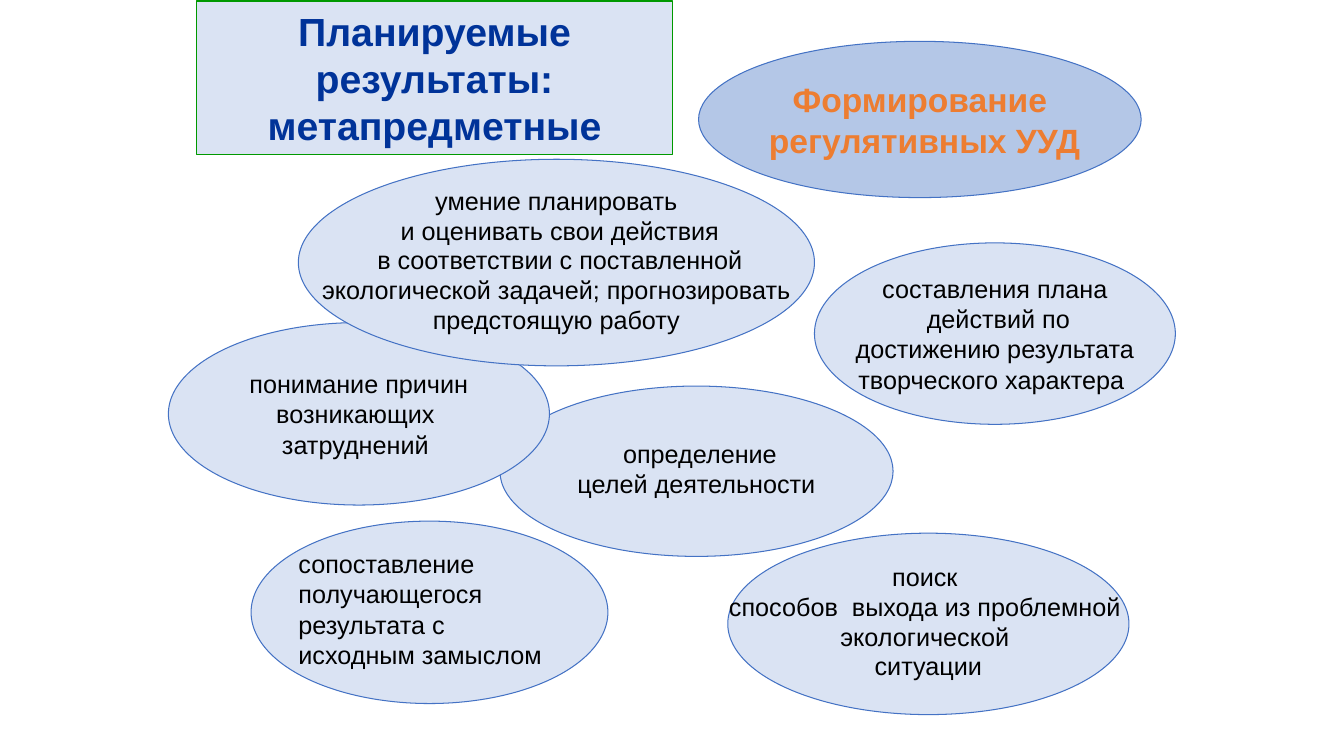
"""Build a slide of planned results as ovals around a title."""
from pptx import Presentation
from pptx.dml.color import RGBColor
from pptx.enum.shapes import MSO_SHAPE
from pptx.enum.text import MSO_ANCHOR, PP_ALIGN
from pptx.util import Inches, Pt

OVAL, RECT = MSO_SHAPE.OVAL, MSO_SHAPE.RECTANGLE
LEFT, CENTER = PP_ALIGN.LEFT, PP_ALIGN.CENTER
TOP, MIDDLE = MSO_ANCHOR.TOP, MSO_ANCHOR.MIDDLE
WIDTH, HEIGHT = Inches(13.33), Inches(7.5)
PALE, MID, BLUE = "DAE3F3", "B4C7E7", "4472C4"
NAVY, GREEN, ORANGE, BLACK = "003399", "009900", "ED7D31", "000000"
LOOSE = {"alignment": CENTER}
TIGHT = {"alignment": CENTER, "line_spacing": 0.8, "space_before": Pt(4)}
BODY = {"size": Pt(18), "bold": False}
INSETS = (0.07, 0.04)

GOALS = ((37.2, 51.07, 29.25, 22.53), TIGHT,
         [" определение", " целей деятельности "])
PLAN = ((60.6, 32.13, 26.85, 24), LOOSE,
        ["составления плана", " действий по",
         " достижению результата ", "творческого характера "])
COMPARISON = ((18.68, 68.93, 26.55, 24.13), LOOSE, [])
SEARCH = ((54.15, 70.53, 29.85, 24), TIGHT,
          ["поиск ", "способов  выхода из проблемной ",
           "экологической ", "ситуации"])
REASONS = ((12.53, 42.67, 28.35, 24.13), LOOSE,
           ["понимание причин", "возникающих ", "затруднений "])
SKILL = ((22.2, 21.07, 38.4, 27.33), TIGHT,
         ["умение планировать", " и оценивать свои действия",
          " в соответствии с поставленной",
          " экологической задачей; прогнозировать ",
          "предстоящую работу"])


def rgb(color):
    """Turn a hex string into a colour."""
    return RGBColor.from_string(color)


def place(box):
    """Turn percent shares of the slide into lengths."""
    sides = (WIDTH, HEIGHT, WIDTH, HEIGHT)
    return [int(side * share / 100) for side, share in zip(sides, box)]


def set_all(obj, values):
    """Set attributes from a dict."""
    for name, value in values.items():
        setattr(obj, name, value)


def write(sp, lines, para, font, color=BLACK, wrap=False,
          anchor=MIDDLE, insets=INSETS):
    """Write one paragraph per line into a shape."""
    tf = sp.text_frame
    side, edge = (Inches(inset) for inset in insets)
    set_all(tf, {"word_wrap": wrap, "vertical_anchor": anchor,
                 "margin_left": side, "margin_right": side,
                 "margin_top": edge, "margin_bottom": edge})
    for i, line in enumerate(lines):
        p = tf.add_paragraph() if i else tf.paragraphs[0]
        set_all(p, para)
        r = p.add_run()
        r.text = line
        set_all(r.font, {"name": "Arial", **font})
        r.font.color.rgb = rgb(color)


def add_figure(s, kind, box, fill=PALE, line=BLUE):
    """Add a filled and outlined shape."""
    sp = s.shapes.add_shape(kind, *place(box))
    sp.shadow.inherit = False
    sp.fill.solid()
    sp.fill.fore_color.rgb = rgb(fill)
    sp.line.color.rgb = rgb(line)
    sp.line.width = Pt(0.75)
    return sp


def add_ovals(s, ovals):
    """Add body ovals with their text."""
    for box, para, lines in ovals:
        write(add_figure(s, OVAL, box), lines, para, BODY)


def add_note(s, box, text):
    """Add a left-aligned wrapping text box."""
    write(s.shapes.add_textbox(*place(box)), [text], {"alignment": LEFT},
          BODY, wrap=True, anchor=TOP)


def main():
    """Build and save the slide."""
    prs = Presentation()
    prs.slide_width, prs.slide_height = WIDTH, HEIGHT
    s = prs.slides.add_slide(prs.slide_layouts[6])
    add_ovals(s, [GOALS, PLAN, COMPARISON])
    add_note(s, (21.68, 72, 20.1, 16.93),
             "сопоставление получающегося результата с исходным замыслом")
    add_ovals(s, [SEARCH, REASONS])
    topic = add_figure(s, OVAL, (51.98, 5.47, 32.93, 20.67), MID)
    write(topic, ["Формирование", " регулятивных УУД"], LOOSE,
          {"size": Pt(24), "bold": True}, ORANGE)
    add_ovals(s, [SKILL])
    title = add_figure(s, RECT, (14.63, 0.13, 35.4, 20.27), line=GREEN)
    write(title, ["Планируемые результаты: метапредметные"], LOOSE,
          {"size": Pt(28), "bold": True}, NAVY, wrap=True, insets=(0.1, 0.05))
    prs.save("out.pptx")


if __name__ == "__main__":
    main()
